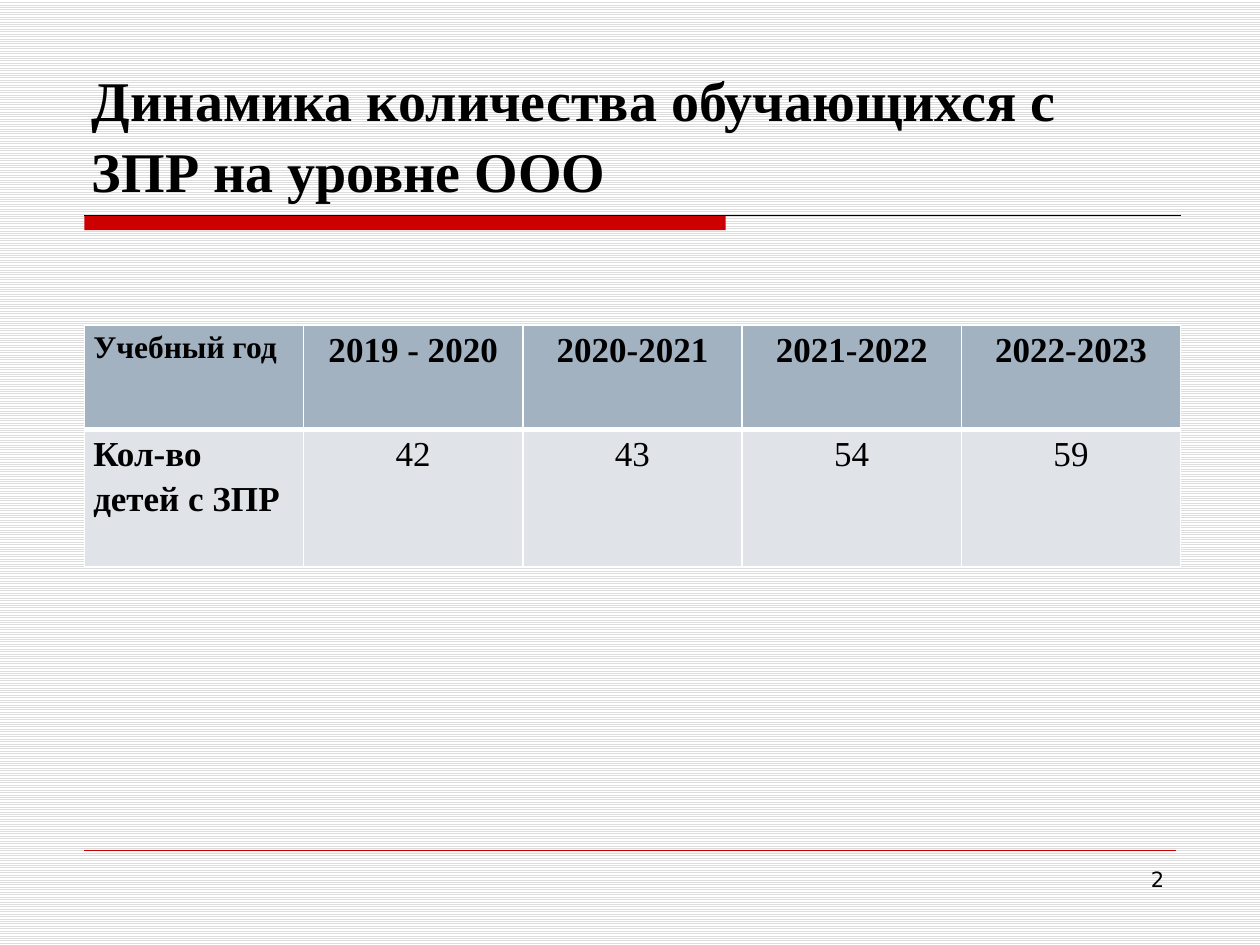
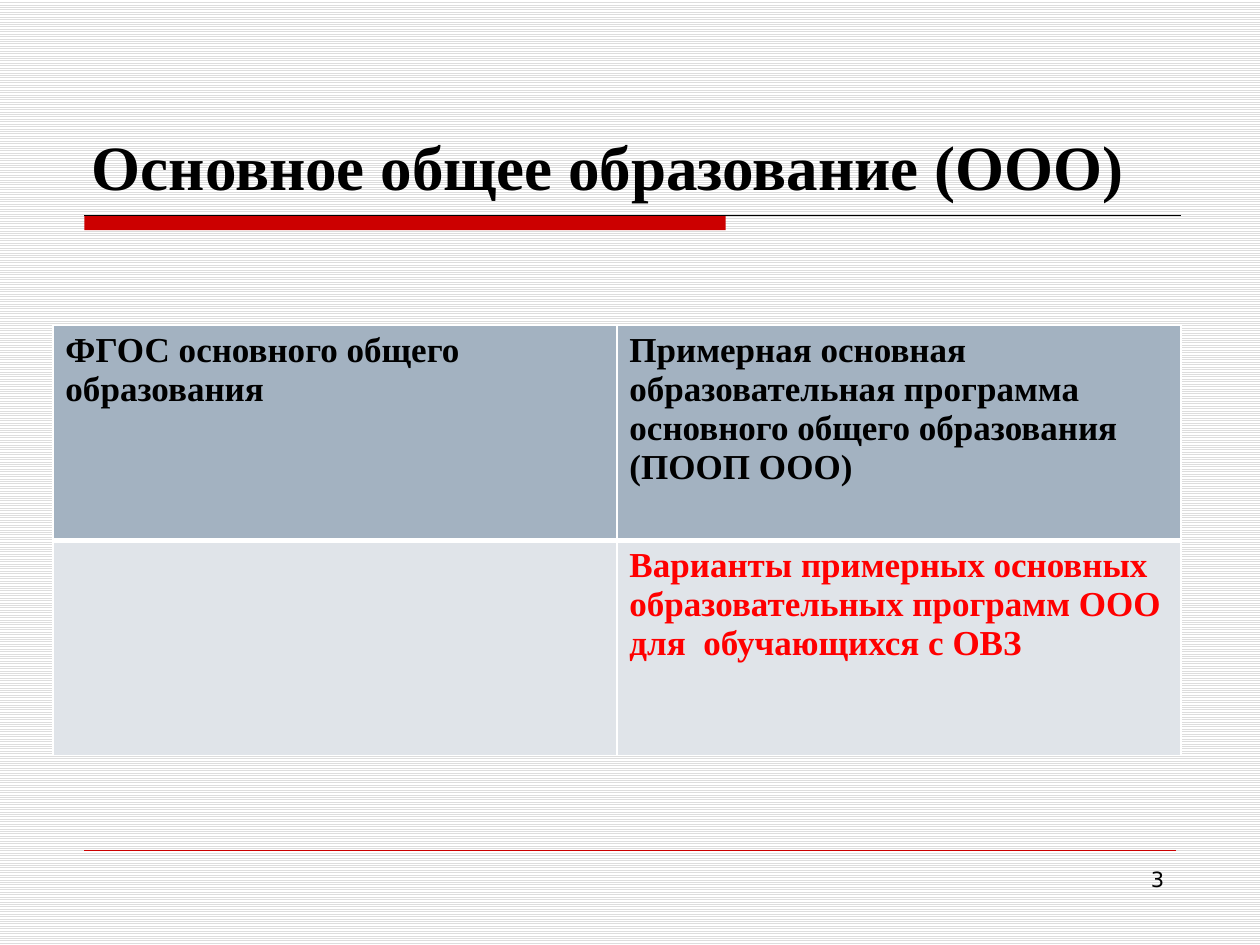
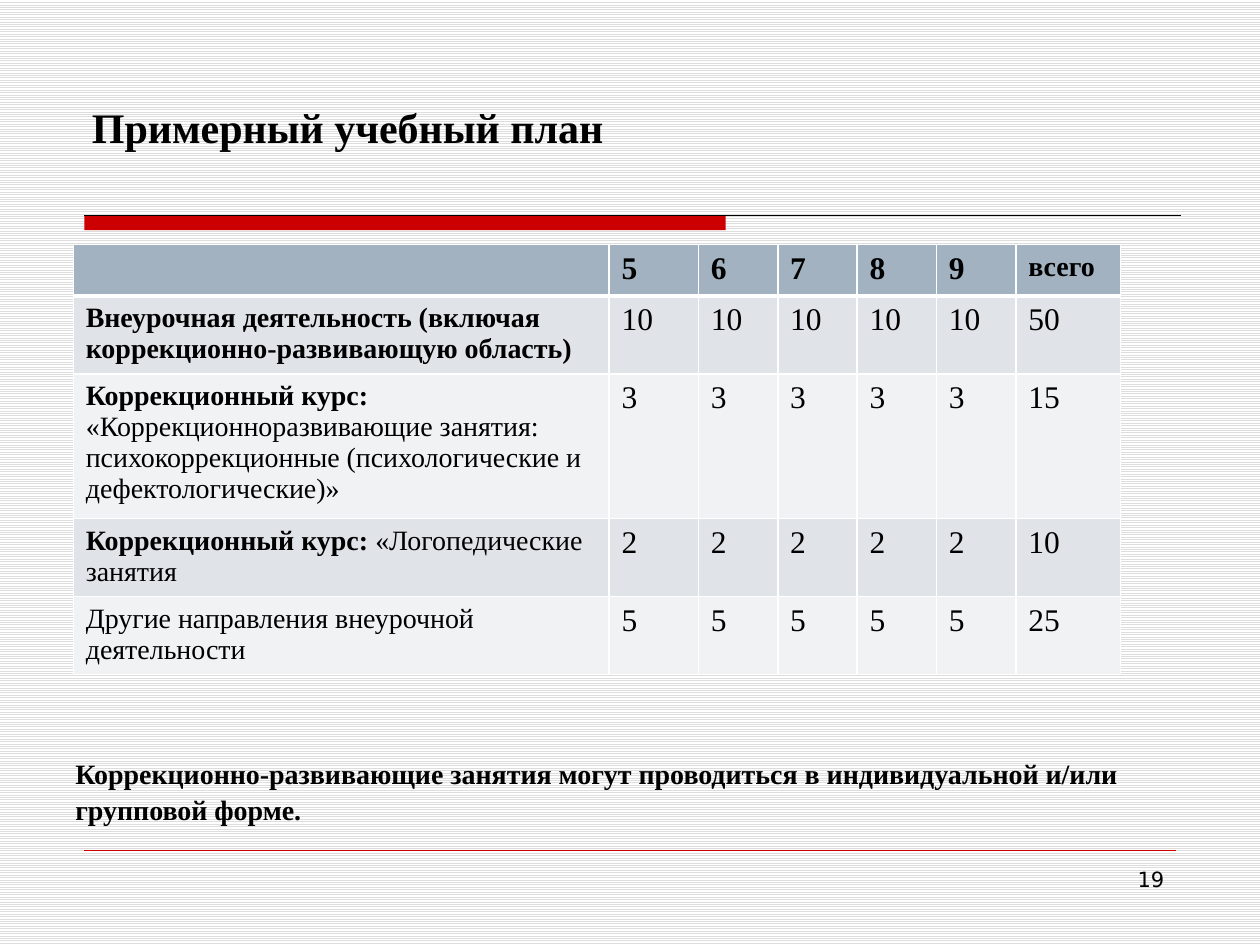
from dataclasses import dataclass

from lxml import etree
from pptx import Presentation
from pptx.dml.color import RGBColor
from pptx.enum.dml import MSO_PATTERN
from pptx.enum.shapes import MSO_CONNECTOR, MSO_SHAPE
from pptx.enum.text import MSO_ANCHOR, MSO_AUTO_SIZE, PP_ALIGN
from pptx.oxml.ns import qn
from pptx.util import Cm, Pt

LIGHT_HORIZONTAL = MSO_PATTERN.LIGHT_HORIZONTAL
STRAIGHT = MSO_CONNECTOR.STRAIGHT
RECTANGLE = MSO_SHAPE.RECTANGLE
BOTTOM = MSO_ANCHOR.BOTTOM
NO_AUTOFIT = MSO_AUTO_SIZE.NONE
LEFT, CENTER, RIGHT, JUSTIFY = (
    PP_ALIGN.LEFT, PP_ALIGN.CENTER, PP_ALIGN.RIGHT, PP_ALIGN.JUSTIFY)


@dataclass(frozen=True)
class Theme:
    font: str = "Times New Roman"
    number_font: str = "DejaVu Sans"
    text: str = "000000"
    accent: str = "CC0000"
    alert: str = "FF0000"
    paper: str = "FFFFFF"
    stripe: str = "DDDDDD"
    header: str = "A3B2C1"
    bands: tuple = ("E0E4E9", "F0F2F4")
    large: int = 20
    medium: int = 18
    small: int = 16
    number: int = 12
    line_spacing: float = 1.06


theme = Theme()


def write(para, spans, align=LEFT, spacing=None, font=theme.font):
    """Add spans of (text, size, bold[, colour]) to a paragraph."""
    para.alignment = align
    para.line_spacing = spacing
    for text, size, bold, *colour in spans:
        span = para.add_run()
        span.text = text
        span.font.name = font
        span.font.size = Pt(size)
        span.font.bold = bold
        span.font.color.rgb = RGBColor.from_string(colour[0] if colour else theme.text)


def draw_rule(page, left, right, top, colour, width):
    """Draw a horizontal line without a shadow."""
    rule = page.shapes.add_connector(STRAIGHT, Cm(left), Cm(top), Cm(right), Cm(top))
    rule.line.color.rgb = RGBColor.from_string(colour)
    rule.line.width = Pt(width)
    etree.SubElement(rule._element.spPr, qn("a:effectLst"))


# Table contents: rows of cells, each cell a list of spans
years = ["2019 - 2020", "2020-2021", "2021-2022", "2022-2023"]
pupils = ["42", "43", "54", "59"]
pupil_rows = [
    [[("Учебный год", theme.medium, True)]]
    + [[(year, theme.large, True)] for year in years],
    [[("Кол-во детей с ЗПР", theme.large, True)]]
    + [[(count, theme.large, False)] for count in pupils],
]

programme_rows = [
    [[("ФГОС основного общего образования", theme.large, True)],
     [("Примерная основная образовательная программа основного общего "
       "образования (ПООП ООО)", theme.large, True)]],
    [[],
     [("Варианты примерных основных образовательных программ ООО для  "
       "обучающихся с ОВЗ", theme.large, True, theme.alert)]],
]

course = ("Коррекционный курс: ", theme.small, True)
activities = [
    ([("Внеурочная деятельность (включая коррекционно-развивающую область)",
       theme.small, True)], 10),
    ([course, ("«Коррекционноразвивающие занятия: психокоррекционные "
               "(психологические и дефектологические)»", theme.small, False)], 3),
    ([course, ("«Логопедические занятия", theme.small, False)], 2),
    ([("Другие направления внеурочной деятельности", theme.small, False)], 5),
]
grades = range(5, 10)
plan_rows = [[[]] + [[(str(grade), theme.medium, True)] for grade in grades]
             + [[("всего", theme.small, True)]]]
for label, hours in activities:
    counts = [hours] * len(grades) + [hours * len(grades)]
    plan_rows.append([label] + [[(str(count), theme.medium, False)] for count in counts])

# Pages
pages = [
    dict(number="2", title="Динамика количества обучающихся с ЗПР на уровне ООО",
         title_size=32, title_height=3.38, rows=pupil_rows, left=1.7, top=6.55,
         widths=[4.42] * 5, heights=[2.11, 2.77], margins=(0.18, 0),
         aligns=(JUSTIFY, CENTER), spacing=1.15),
    dict(number="3", title="Основное общее образование (ООО)",
         title_size=36, title_height=3.38, rows=programme_rows, left=1.07, top=6.55,
         widths=[11.37] * 2, heights=[4.34] * 2, margins=(0.25, 0.13),
         aligns=(LEFT, LEFT), spacing=None),
    dict(number="19", title="Примерный учебный план",
         title_size=24, title_height=2.34, rows=plan_rows, left=1.48, top=4.93,
         widths=[10.8, 1.8] + [1.6] * 4 + [2.11],
         heights=[0.99, 1.57, 2.92, 1.57, 1.57], margins=(0.25, 0.13),
         aligns=(LEFT, LEFT), spacing=None),
]

deck = Presentation()
deck.slide_width, deck.slide_height = Cm(25.4), Cm(19.05)
title_only = deck.slide_layouts[5]

# Shared striped background
background = deck.slide_master.background.fill
background.patterned()
background.pattern = LIGHT_HORIZONTAL
background.fore_color.rgb = RGBColor.from_string(theme.stripe)
background.back_color.rgb = RGBColor.from_string(theme.paper)

for content in pages:
    page = deck.slides.add_slide(title_only)

    # Title band and footer rule
    band = page.shapes.add_shape(RECTANGLE, Cm(1.7), Cm(4.34), Cm(12.93), Cm(0.3))
    band.shadow.inherit = False
    band.fill.solid()
    band.fill.fore_color.rgb = RGBColor.from_string(theme.accent)
    band.line.fill.background()
    draw_rule(page, 1.7, 23.8, 4.34, theme.text, 0.75)
    draw_rule(page, 1.7, 23.7, 17.15, theme.accent, 0.25)

    # Title
    title = page.shapes.title
    title.left, title.top = Cm(1.6), Cm(0.85)
    title.width, title.height = Cm(22.23), Cm(content["title_height"])
    title.text_frame.auto_size = NO_AUTOFIT
    title.text_frame.vertical_anchor = BOTTOM
    write(title.text_frame.paragraphs[0],
          [(content["title"], content["title_size"], True)], spacing=theme.line_spacing)

    # Table
    widths, heights, rows = content["widths"], content["heights"], content["rows"]
    table = page.shapes.add_table(
        len(heights), len(widths), Cm(content["left"]), Cm(content["top"]),
        Cm(sum(widths)), Cm(sum(heights))).table
    table.horz_banding = False
    for column, width in zip(table.columns, widths):
        column.width = Cm(width)
    for row, height in zip(table.rows, heights):
        row.height = Cm(height)
    side_margin, end_margin = content["margins"]
    for row_index, row in enumerate(rows):
        for column_index, spans in enumerate(row):
            cell = table.cell(row_index, column_index)
            cell.margin_left = cell.margin_right = Cm(side_margin)
            cell.margin_top = cell.margin_bottom = Cm(end_margin)
            write(cell.text_frame.paragraphs[0], spans,
                  content["aligns"][min(column_index, 1)], content["spacing"])

            # White borders, thicker between header and body
            borders = {"lnL": 1, "lnR": 1, "lnT": 3 if row_index == 1 else 1,
                       "lnB": 3 if row_index == 0 else 1}
            properties = cell._tc.get_or_add_tcPr()
            for side, width in borders.items():
                border = etree.SubElement(properties, qn(f"a:{side}"), w=str(Pt(width)))
                paint = etree.SubElement(border, qn("a:solidFill"))
                etree.SubElement(paint, qn("a:srgbClr"), val=theme.paper)
            cell.fill.solid()
            cell.fill.fore_color.rgb = RGBColor.from_string(
                theme.bands[(row_index - 1) % 2] if row_index else theme.header)

    # Page number
    number = page.shapes.add_textbox(Cm(18.21), Cm(17.35), Cm(5.51), Cm(1.32))
    number.text_frame.word_wrap = True
    write(number.text_frame.paragraphs[0], [(content["number"], theme.number, False)],
          RIGHT, font=theme.number_font)

# Note under the study plan
note = page.shapes.add_textbox(Cm(1.27), Cm(13.77), Cm(23.5), Cm(3))
note.text_frame.word_wrap = True
note.text_frame.vertical_anchor = BOTTOM
write(note.text_frame.paragraphs[0],
      [("Коррекционно-развивающие занятия могут проводиться в индивидуальной "
        "и/или групповой форме.", theme.small, True)], spacing=theme.line_spacing)

deck.save("out.pptx")
